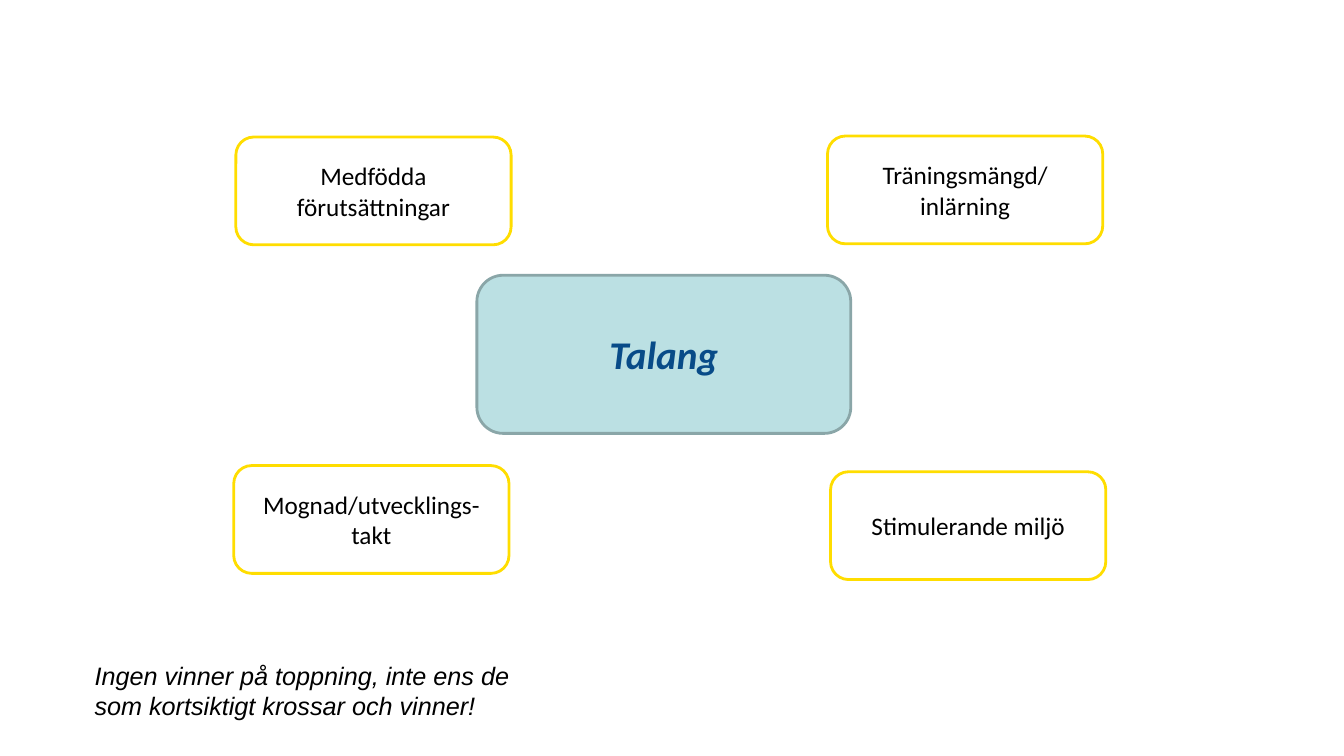
from pptx import Presentation
from pptx.dml.color import RGBColor
from pptx.enum import shapes, text
from pptx.util import Pt

BLACK, BLUE, TEAL, GREY, YELLOW = "000000", "084B88", "BBE0E3", "8AA6A8", "FFDD00"
FACTOR_W, FACTOR_H = 196.6, 77

# Left, top and lines of each factor around the talent box
FACTORS = [
    (168.5, 97.9, ["Medfödda förutsättningar"]),
    (167, 332.6, ["Mognad/utvecklings-takt"]),
    (591.1, 97.2, ["Träningsmängd/", "inlärning"]),
    (593.3, 337, ["Stimulerande miljö"]),
]


def color(value):
    return RGBColor.from_string(value)


def add_lines(tf, lines, align, size, font, ink, bold=False, italic=False):
    tf.word_wrap = True
    for i, line in enumerate(lines):
        p = tf.paragraphs[0] if i == 0 else tf.add_paragraph()
        p.alignment = align
        r = p.add_run()
        r.text = line
        r.font.size = Pt(size)
        r.font.name = font
        r.font.bold = bold
        r.font.italic = italic
        r.font.color.rgb = color(ink)


def add_box(s, x, y, w, h, lines, border, fill=None, size=18, ink=BLACK, strong=False):
    sp = s.shapes.add_shape(shapes.MSO_SHAPE.ROUNDED_RECTANGLE, Pt(x), Pt(y), Pt(w), Pt(h))
    sp.shadow.inherit = False
    if fill:
        sp.fill.solid()
        sp.fill.fore_color.rgb = color(fill)
    else:
        sp.fill.background()
    sp.line.color.rgb = color(border)
    sp.line.width = Pt(2)
    tf = sp.text_frame
    tf.vertical_anchor = text.MSO_ANCHOR.MIDDLE
    add_lines(tf, lines, text.PP_ALIGN.CENTER, size, "Calibri", ink, strong, strong)


def add_note(s, x, y, w, h, line):
    tf = s.shapes.add_textbox(Pt(x), Pt(y), Pt(w), Pt(h)).text_frame
    add_lines(tf, [line], text.PP_ALIGN.LEFT, 18, "Arial", BLACK, italic=True)
    tf.auto_size = text.MSO_AUTO_SIZE.SHAPE_TO_FIT_TEXT


def main():
    prs = Presentation()
    prs.slide_width, prs.slide_height = Pt(960), Pt(540)
    s = prs.slides.add_slide(prs.slide_layouts[6])

    # Talent in the centre
    add_box(s, 340.6, 196.6, 267.1, 113, ["Talang"], GREY, TEAL, 28, BLUE, True)

    # Surrounding factors
    for x, y, lines in FACTORS:
        add_box(s, x, y, FACTOR_W, FACTOR_H, lines, YELLOW)

    # Closing remark
    add_note(s, 60.5, 468, 321.1, 51.1,
             "Ingen vinner på toppning, inte ens de som kortsiktigt krossar och vinner!")

    prs.save("out.pptx")


if __name__ == "__main__":
    main()
